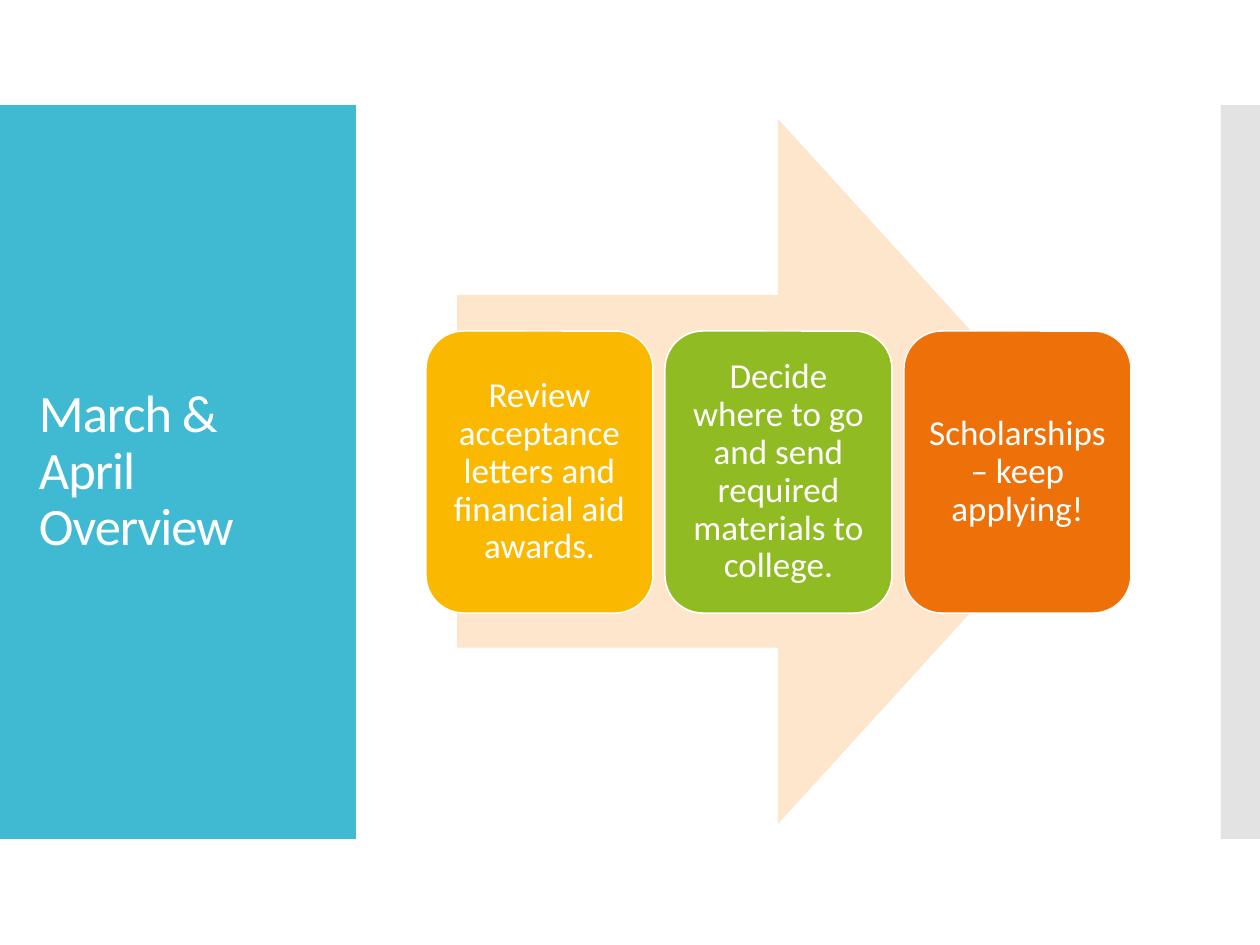
from pptx import Presentation
from pptx.dml.color import RGBColor
from pptx.enum.shapes import MSO_SHAPE
from pptx.enum.text import MSO_ANCHOR, MSO_AUTO_SIZE, PP_ALIGN
from pptx.oxml.ns import qn
from pptx.util import Emu, Pt
from lxml.etree import SubElement

PX_PER_INCH = 126
WHITE = "FFFFFF"
CARDS = [
    ("Review acceptance letters and financial aid awards.", "FAB900"),
    ("Decide where to go and send required materials to college.", "90BB23"),
    ("Scholarships – keep applying!", "EE7008"),
]


def px(length):
    return Emu(round(length * 914400 / PX_PER_INCH))


def color(hex_code):
    return RGBColor.from_string(hex_code)


def set_all(target, values):
    for name, value in values.items():
        setattr(target, name, value)


class SlideBuilder:
    font_name = "Calibri"
    line_spacing = 0.9

    def __init__(self, page):
        self.page = page

    def shape(self, kind, left, top, width, height, fill, line=None, alpha=None):
        shape = self.page.shapes.add_shape(
            kind, px(left), px(top), px(width), px(height))
        shape.shadow.inherit = False
        shape.fill.solid()
        shape.fill.fore_color.rgb = color(fill)
        if alpha is not None:
            fill_color = shape.fill._xPr.find(qn("a:solidFill"))[0]
            SubElement(fill_color, qn("a:alpha")).set("val", str(alpha * 1000))
        if line:
            shape.line.color.rgb = color(line)
            shape.line.width = Pt(0.85)
        else:
            shape.line.fill.background()
        return shape

    def text(self, box, text, size, align, inset):
        frame = box.text_frame
        set_all(frame, {
            "word_wrap": True,
            "auto_size": MSO_AUTO_SIZE.NONE,
            "vertical_anchor": MSO_ANCHOR.MIDDLE,
            "margin_left": px(inset), "margin_right": px(inset),
            "margin_top": px(inset), "margin_bottom": px(inset),
        })
        para = frame.paragraphs[0]
        set_all(para, {"alignment": align, "line_spacing": self.line_spacing})
        span = para.add_run()
        span.text = text
        set_all(span.font, {"name": self.font_name, "size": Pt(size)})
        span.font.color.rgb = color(WHITE)
        return span

    def title(self, text, left, top, width, height):
        box = self.page.shapes.title
        set_all(box, {"left": px(left), "top": px(top),
                      "width": px(width), "height": px(height)})
        span = self.text(box, text, 30, PP_ALIGN.LEFT, 13)
        span.font._element.set("spc", "-60")
        # Bring the title in front of the side panel
        self.page.shapes._spTree.append(box._element)

    def card(self, text, fill, left, top, width, height):
        box = self.shape(MSO_SHAPE.ROUNDED_RECTANGLE,
                         left, top, width, height, fill, line=WHITE)
        self.text(box, text, 20, PP_ALIGN.CENTER, 10)


def main():
    deck = Presentation()
    deck.slide_width, deck.slide_height = px(1260), px(945)
    builder = SlideBuilder(deck.slides.add_slide(deck.slide_layouts[5]))

    # Side panels and title
    builder.shape(MSO_SHAPE.RECTANGLE, 0, 105, 356, 734, "40BAD2")
    builder.shape(MSO_SHAPE.RECTANGLE, 1221, 105, 39, 734, "C8C8C8", alpha=50)
    builder.title("March & April Overview", 26, 155, 305, 634)

    # Process arrow with its row of cards
    builder.shape(MSO_SHAPE.RIGHT_ARROW, 457, 119, 642, 705, "FDE6CC")
    card_width, gap = 227, 12
    for index, (text, fill) in enumerate(CARDS):
        left = 426 + index * (card_width + gap)
        builder.card(text, fill, left, 331, card_width, 282)

    deck.save("out.pptx")


if __name__ == "__main__":
    main()
